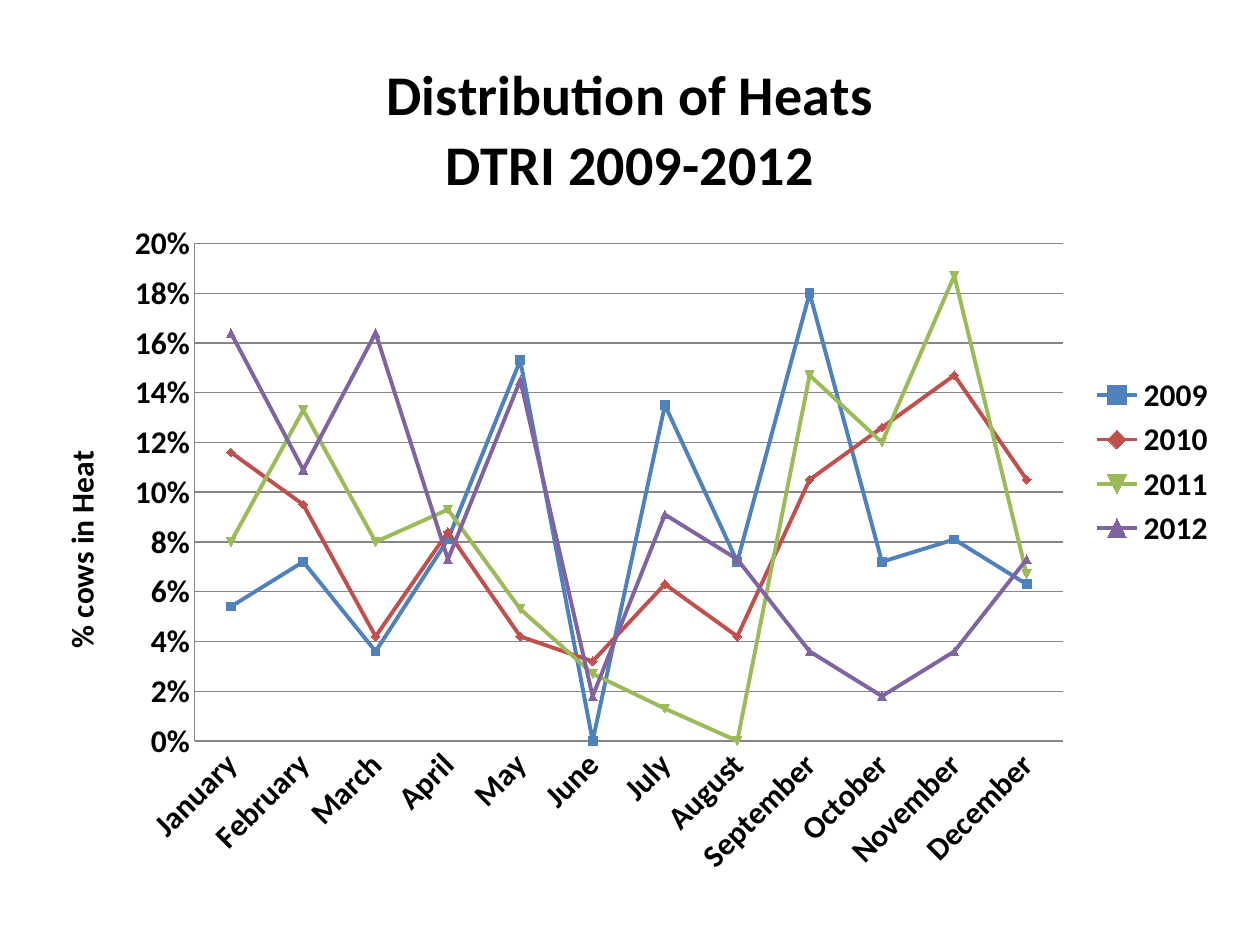
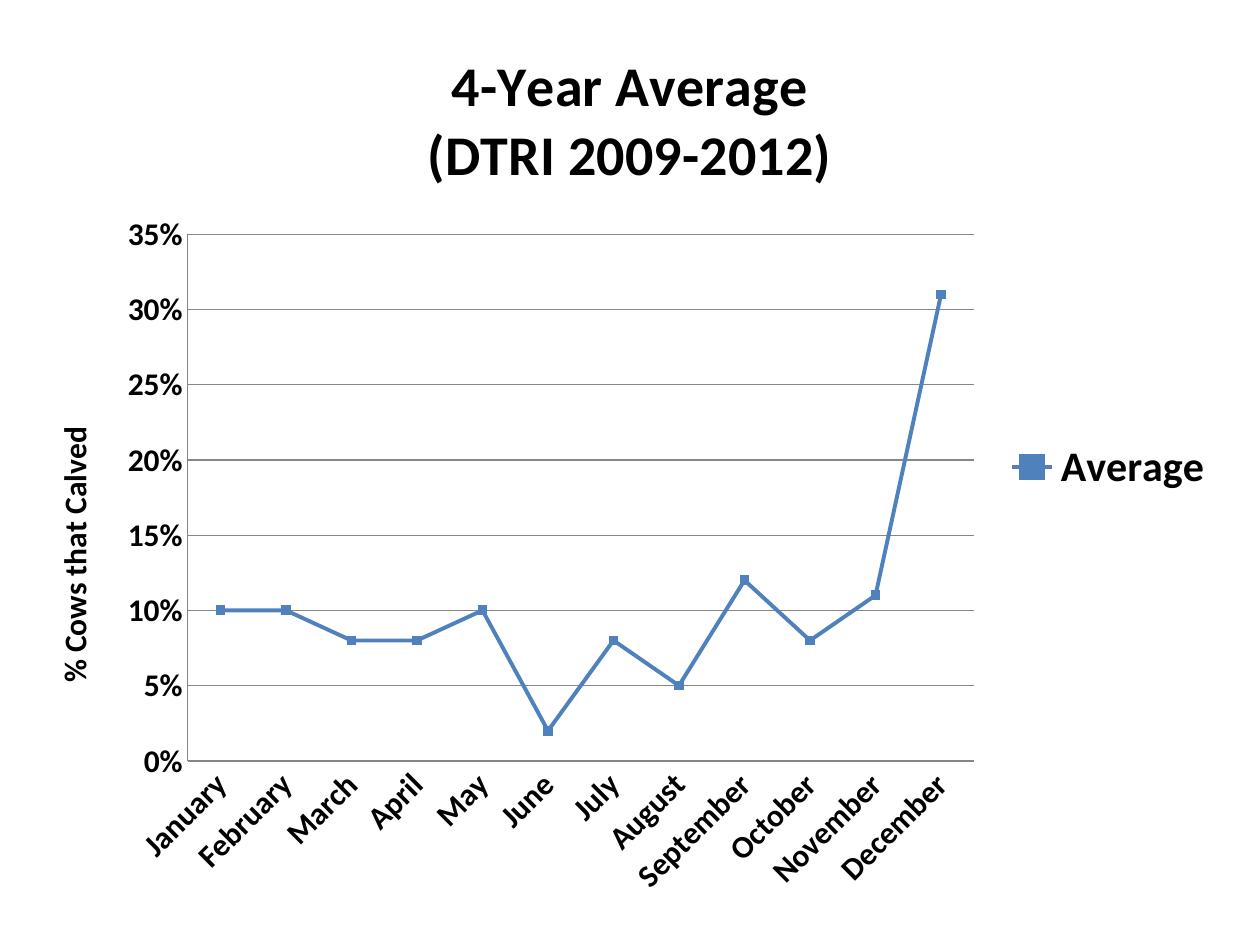
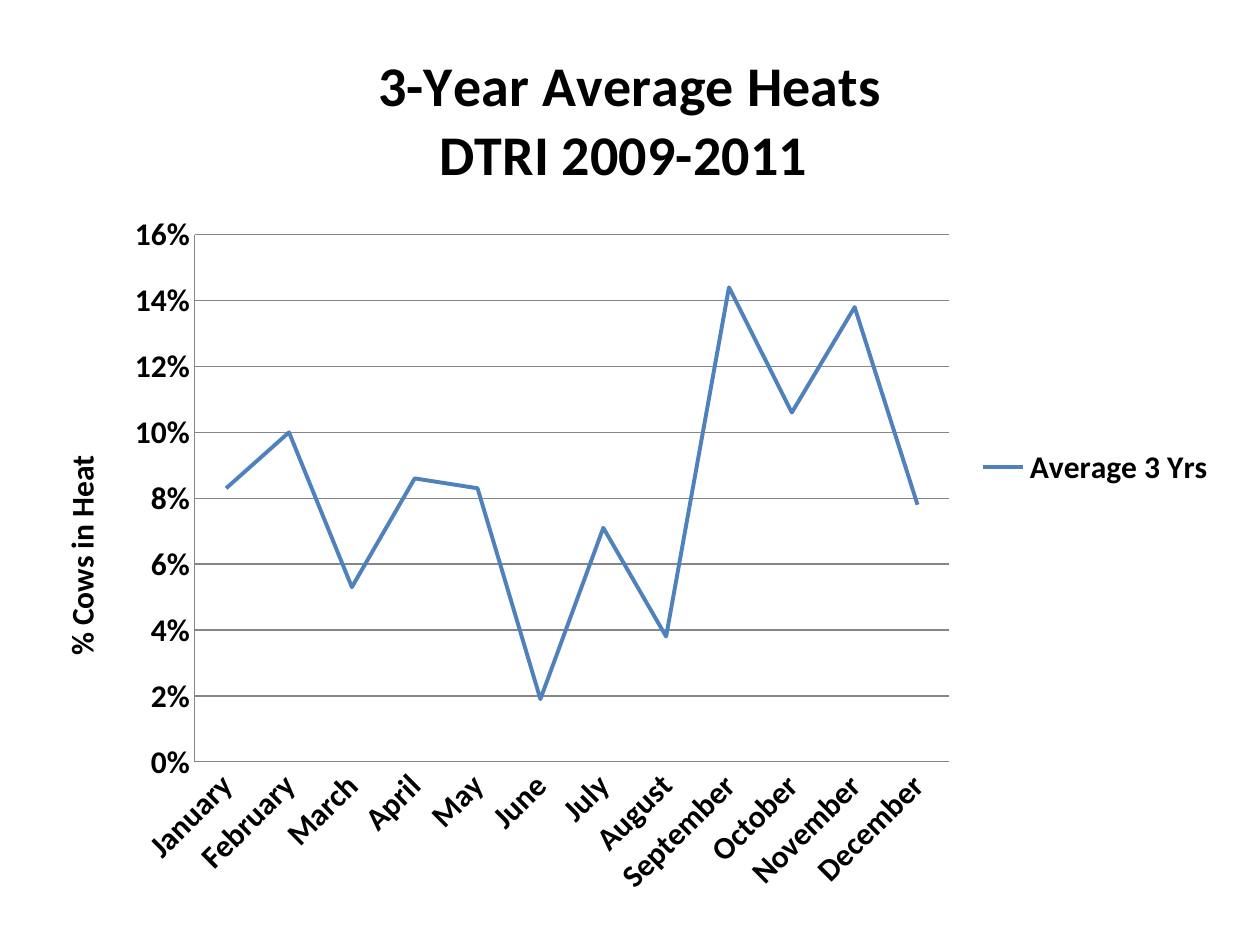
from dataclasses import dataclass

from lxml.etree import SubElement
from pptx import Presentation
from pptx.chart.data import CategoryChartData
from pptx.dml.color import RGBColor
from pptx.enum.chart import XL_CHART_TYPE as ChartType
from pptx.enum.chart import XL_LEGEND_POSITION as LegendPosition
from pptx.enum.chart import XL_TICK_MARK as TickMark
from pptx.oxml.ns import qn
from pptx.util import Inches, Pt


@dataclass(frozen=True)
class Theme:
    font: str = "Calibri"
    ink: str = "000000"
    grid: str = "868686"
    series: tuple = ("4F81BD", "C0504D", "9BBB59", "8064A2")
    title_size: int = 32
    label_size: int = 18
    large_legend_size: int = 24
    line_width: float = 2.25
    grid_width: float = 0.75


THEME = Theme()
MONTHS = ("January", "February", "March", "April", "May", "June", "July",
          "August", "September", "October", "November", "December")
AVERAGE_BOX = (0.25, 0.17, 9.5, 7.08)

CHART_PAGES = (
    {
        "box": (0.25, 0.25, 9.5, 6.83),
        "kind": ChartType.LINE_MARKERS,
        "base_size": 12,
        "title": ("Distribution of Heats", "DTRI 2009-2012"),
        "axis_title": "% cows in Heat",
        "scale": {"minimum_scale": 0, "maximum_scale": 0.2, "major_unit": 0.02},
        "legend_size": THEME.label_size,
        "series": {
            "2009": (0.054, 0.072, 0.036, 0.081, 0.153, 0,
                     0.135, 0.072, 0.18, 0.072, 0.081, 0.063),
            "2010": (0.116, 0.095, 0.042, 0.084, 0.042, 0.032,
                     0.063, 0.042, 0.105, 0.126, 0.147, 0.105),
            "2011": (0.08, 0.133, 0.08, 0.093, 0.053, 0.027,
                     0.013, 0, 0.147, 0.12, 0.187, 0.067),
            "2012": (0.164, 0.109, 0.164, 0.073, 0.145, 0.018,
                     0.091, 0.073, 0.036, 0.018, 0.036, 0.073),
        },
    },
    {
        "box": AVERAGE_BOX,
        "kind": ChartType.LINE_MARKERS,
        "base_size": 10,
        "title": ("4-Year Average", "(DTRI 2009-2012)"),
        "axis_title": "% Cows that Calved",
        "scale": {"minimum_scale": 0, "maximum_scale": 0.35, "major_unit": 0.05},
        "legend_size": THEME.large_legend_size,
        "plot_box": (1.49, 1.86, 6.24, 4.18),
        "series": {
            "Average": (0.1, 0.1, 0.08, 0.08, 0.1, 0.02,
                        0.08, 0.05, 0.12, 0.08, 0.11, 0.31),
        },
    },
    {
        "box": AVERAGE_BOX,
        "kind": ChartType.LINE,
        "base_size": 18,
        "title": ("3-Year Average Heats", "DTRI 2009-2011 "),
        "axis_title": "% Cows in Heat",
        "scale": {"minimum_scale": 0, "maximum_scale": 0.16, "major_unit": 0.02},
        "legend_size": THEME.label_size,
        "series": {
            "Average 3 Yrs": (0.083, 0.1, 0.053, 0.086, 0.083, 0.019,
                              0.071, 0.038, 0.144, 0.106, 0.138, 0.078),
        },
    },
)


def set_values(target, values):
    for name, value in values.items():
        setattr(target, name, value)


def style_font(font, size):
    set_values(font, {"name": THEME.font, "size": Pt(size), "bold": True})
    font.color.rgb = RGBColor.from_string(THEME.ink)


def style_line(line, color, width):
    line.color.rgb = RGBColor.from_string(color)
    line.width = Pt(width)


def write_title(owner, lines, size):
    frame = owner.text_frame
    for index, text in enumerate(lines):
        para = frame.add_paragraph() if index else frame.paragraphs[0]
        span = para.add_run()
        span.text = text
        style_font(para.font, size)
        style_font(span.font, size)


def style_axes(chart, axis_title, scale):
    for axis in (chart.category_axis, chart.value_axis):
        set_values(axis, {"major_tick_mark": TickMark.NONE,
                          "minor_tick_mark": TickMark.NONE})
        style_font(axis.tick_labels.font, THEME.label_size)
        style_line(axis.format.line, THEME.grid, THEME.grid_width)
    values = chart.value_axis
    set_values(values, {"has_major_gridlines": True, **scale})
    style_line(values.major_gridlines.format.line, THEME.grid, THEME.grid_width)
    set_values(values.tick_labels, {"number_format": "0%",
                                    "number_format_is_linked": False})
    write_title(values.axis_title, (axis_title,), THEME.label_size)


def style_series(chart, has_markers):
    for series, color in zip(chart.plots[0].series, THEME.series):
        series.smooth = False
        style_line(series.format.line, color, THEME.line_width)
        if has_markers:
            marker = series.marker.format
            marker.fill.solid()
            marker.fill.fore_color.rgb = RGBColor.from_string(color)
            marker.line.color.rgb = RGBColor.from_string(color)


def place_plot(chart, box, plot_box):
    left, top, width, height = plot_box
    area = chart.element.find(".//" + qn("c:plotArea"))
    layout = area.find(qn("c:layout"))
    if layout is None:
        layout = SubElement(area, qn("c:layout"))
        area.insert(0, layout)
    manual = SubElement(layout, qn("c:manualLayout"))
    settings = {
        "layoutTarget": "inner", "xMode": "edge", "yMode": "edge",
        "x": (left - box[0]) / box[2], "y": (top - box[1]) / box[3],
        "w": width / box[2], "h": height / box[3],
    }
    for name, value in settings.items():
        SubElement(manual, qn(f"c:{name}")).set("val", str(value))


def add_line_chart(page, box, kind, base_size, title, axis_title, scale,
                   legend_size, series, plot_box=None):
    data = CategoryChartData(number_format="0%")
    data.categories = MONTHS
    for name, values in series.items():
        data.add_series(name, values)
    chart = page.shapes.add_chart(kind, *map(Inches, box), data).chart
    style_font(chart.font, base_size)
    set_values(chart, {"has_title": True, "has_legend": True})
    write_title(chart.chart_title, title, THEME.title_size)
    chart.chart_title.include_in_layout = False
    set_values(chart.legend, {"position": LegendPosition.RIGHT,
                              "include_in_layout": False})
    style_font(chart.legend.font, legend_size)
    chart.plots[0].vary_by_categories = False
    style_axes(chart, axis_title, scale)
    style_series(chart, kind == ChartType.LINE_MARKERS)
    if plot_box:
        place_plot(chart, box, plot_box)


def main():
    deck = Presentation()
    set_values(deck, {"slide_width": Inches(10), "slide_height": Inches(7.5)})
    blank = deck.slide_layouts.get_by_name("Blank")
    for chart_page in CHART_PAGES:
        add_line_chart(deck.slides.add_slide(blank), **chart_page)
    deck.save("out.pptx")


if __name__ == "__main__":
    main()
